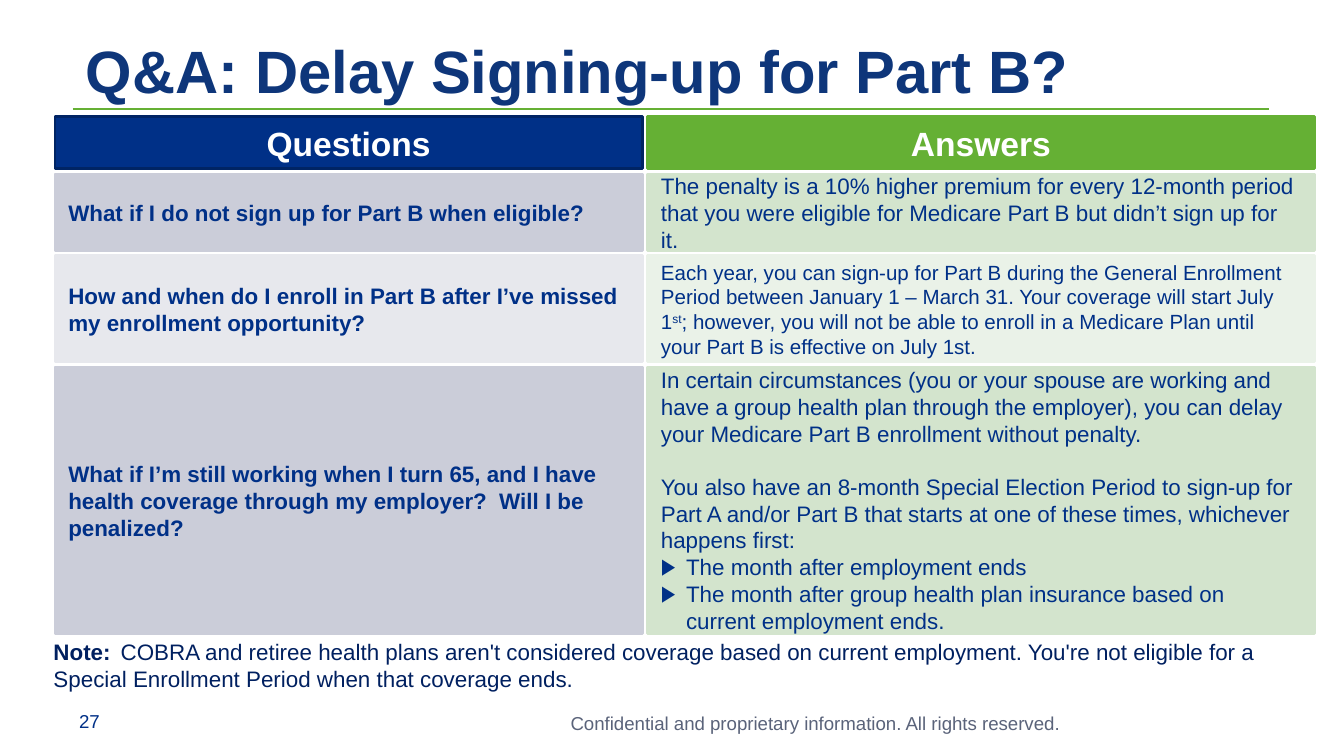
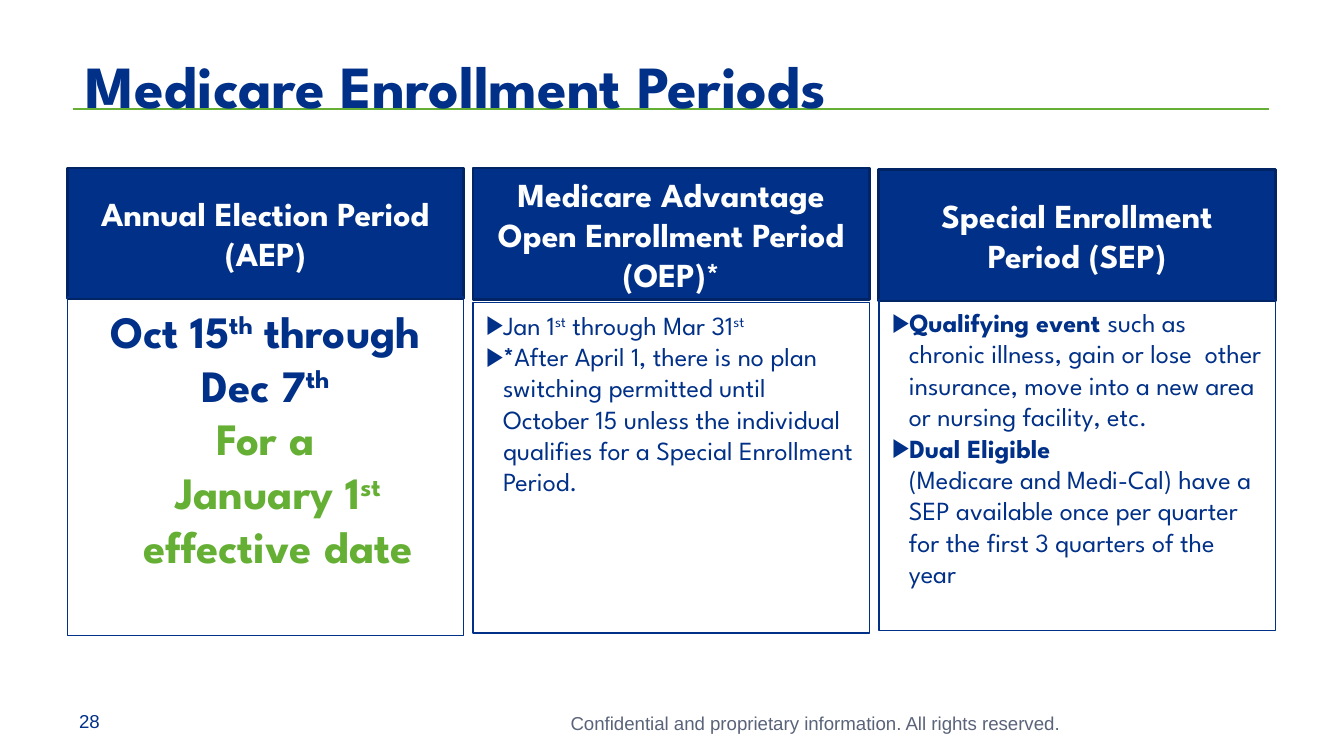
import pptx
import pptx.dml.color
import pptx.enum.shapes
import pptx.enum.text
import pptx.oxml.ns
import pptx.util
from lxml import etree

Pt = pptx.util.Pt
Color = pptx.dml.color.RGBColor
Align = pptx.enum.text.PP_ALIGN
Anchor = pptx.enum.text.MSO_ANCHOR
qn = pptx.oxml.ns.qn

NAVY = Color(0x00, 0x30, 0x87)
NAVY_EDGE = Color(0x00, 0x24, 0x64)
TITLE_BLUE = Color(0x0E, 0x36, 0x7A)
NOTE_BLUE = Color(0x00, 0x20, 0x60)
GREEN = Color(0x65, 0xB0, 0x34)
GRAY = Color(0x5A, 0x63, 0x7A)
WHITE = Color(0xFF, 0xFF, 0xFF)
QUESTION_FILLS = [Color(0xCB, 0xCD, 0xD9), Color(0xE7, 0xE8, 0xED)]
ANSWER_FILLS = [Color(0xD3, 0xE4, 0xCD), Color(0xEA, 0xF2, 0xE8)]
ARIAL = "Arial"
SPARTAN = "League Spartan"

FOOTER = "Confidential and proprietary information. All rights reserved."

QA_TITLE = "Q&A: Delay Signing-up for Part B?"
QA_HEADINGS = ["Questions", "Answers"]
QA_ROWS = [
    {"height": 41.1, "size": 12,
     "question": "What if I do not sign up for Part B when eligible?",
     "answer": ["The penalty is a 10% higher premium for every 12-month period that you "
                "were eligible for Medicare Part B but didn’t sign up for it."]},
    {"height": 56.9, "size": 11,
     "question": "How and when do I enroll in Part B after I’ve missed my enrollment opportunity?",
     "answer": [[("Each year, you can sign-up for Part B during the General Enrollment Period "
                  "between January 1 – March 31. Your coverage will start July 1", ""),
                 ("st", "super"),
                 ("; however, you will not be able to enroll in a Medicare Plan until your "
                  "Part B is effective on July 1st.", "")]]},
    {"height": 142.8, "size": 12,
     "question": "What if I’m still working when I turn 65, and I have health coverage "
                 "through my employer?  Will I be penalized?",
     "answer": [
         {"runs": "In certain circumstances (you or your spouse are working and have a group "
                  "health plan through the employer), you can delay your Medicare Part B "
                  "enrollment without penalty.", "after": 13.8},
         "You also have an 8-month Special Election Period to sign-up for Part A and/or "
         "Part B that starts at one of these times, whichever happens first:",
         {"runs": "The month after employment ends", "bullet": 13.5},
         {"runs": "The month after group health plan insurance based on current employment ends.",
          "bullet": 13.5}]},
]
QA_NOTE = [("Note: ", "bold"),
           ("\tCOBRA and retiree health plans aren't considered coverage based on current "
            "employment. You're not eligible for a Special Enrollment Period when that "
            "coverage ends.", "")]

PERIODS_TITLE = "Medicare Enrollment Periods"
PERIODS = [
    {"heading": "Annual Election Period (AEP)", "head": (90, 69.8), "body": (159.1, 181.4),
     "format": {"size": 24, "bold": True, "align": Align.CENTER},
     "text": [
         [("Oct 15", ""), ("th", "super"), (" through Dec 7", ""), ("th", "super")],
         {"runs": "For a", "color": GREEN},
         {"runs": [("January 1", ""), ("st ", "super"), ("effective date", "")],
          "color": GREEN, "indent": 13.5}]},
    {"heading": "Medicare Advantage Open Enrollment Period (OEP)*",
     "head": (90, 70.6), "body": (162, 177.1), "format": {"size": 14},
     "text": [
         {"runs": [("Jan 1", ""), ("st", "super"), (" through Mar 31", ""), ("st", "super")],
          "bullet": 9},
         {"runs": [("*", "bold"),
                   ("After April 1, there is no plan switching permitted until October 15 "
                    "unless the individual qualifies for a Special Enrollment Period.", "")],
          "bullet": 9}]},
    {"heading": "Special Enrollment Period (SEP)",
     "head": (90.7, 70.6), "body": (160.6, 177.1), "format": {"size": 14},
     "text": [
         {"runs": [("Qualifying event ", "bold"),
                   ("such as chronic illness, gain or lose  other insurance, move into a new "
                    "area or nursing facility, etc.", "")], "bullet": 9},
         {"runs": [("Dual Eligible", "bold"), ("\n", ""),
                   ("(Medicare and Medi-Cal) have a SEP available once per quarter for the "
                    "first 3 quarters of the year", "")], "bullet": 9}]},
]


def set_indent(para, left, bullet=False):
    properties = para._p.get_or_add_pPr()
    properties.set("marL", str(Pt(left)))
    properties.set("indent", str(-Pt(left) if bullet else 0))
    if bullet:
        color = etree.SubElement(properties, qn("a:buClr"))
        etree.SubElement(color, qn("a:srgbClr"), val=str(NAVY))
        etree.SubElement(properties, qn("a:buFont"), typeface=ARIAL)
        etree.SubElement(properties, qn("a:buChar"), char="▶")


def write(box, text, size=12, font=ARIAL, color=NAVY, bold=False, align=Align.LEFT,
          anchor=Anchor.TOP, inset_top=3.6, tab=None):
    frame = box.text_frame
    frame.word_wrap = True
    frame.vertical_anchor = anchor
    frame.margin_top = Pt(inset_top)
    for index, item in enumerate([text] if isinstance(text, str) else text):
        entry = item if isinstance(item, dict) else {"runs": item}
        para = frame.add_paragraph() if index else frame.paragraphs[0]
        para.alignment = align
        if "after" in entry:
            para.space_after = Pt(entry["after"])
        if "bullet" in entry:
            set_indent(para, entry["bullet"], bullet=True)
        if "indent" in entry:
            set_indent(para, entry["indent"])
        if tab:
            stops = etree.SubElement(para._p.get_or_add_pPr(), qn("a:tabLst"))
            etree.SubElement(stops, qn("a:tab"), pos=str(Pt(tab)), algn="l")
        para.font.size = Pt(size)
        runs = entry["runs"]
        for words, style in [(runs, "")] if isinstance(runs, str) else runs:
            if words == "\n":
                para.add_line_break()
                continue
            span = para.add_run()
            span.text = words
            span.font.size = Pt(size)
            span.font.name = font
            span.font.bold = bold or style == "bold"
            span.font.color.rgb = entry.get("color", color)
            if style == "super":
                span.font._element.set("baseline", "30000")


def add_text(page, left, top, width, height, text, **format):
    box = page.shapes.add_textbox(Pt(left), Pt(top), Pt(width), Pt(height))
    write(box, text, **format)


def add_panel(page, left, top, width, height, text, fill=None, line=NAVY, weight=1.5, **format):
    box = page.shapes.add_shape(pptx.enum.shapes.MSO_SHAPE.RECTANGLE,
                                Pt(left), Pt(top), Pt(width), Pt(height))
    box.shadow.inherit = False
    if fill is None:
        box.fill.background()
    else:
        box.fill.solid()
        box.fill.fore_color.rgb = fill
    box.line.color.rgb = line
    box.line.width = Pt(weight)
    write(box, text, **format)


def add_page(deck, number, title, title_top, **title_format):
    page = deck.slides.add_slide(deck.slide_layouts[6])
    rule = page.shapes.add_connector(pptx.enum.shapes.MSO_CONNECTOR.STRAIGHT,
                                     Pt(39), Pt(58.3), Pt(679.7), Pt(58.3))
    rule.line.color.rgb = GREEN
    rule.line.width = Pt(1)
    etree.SubElement(rule._element.spPr, qn("a:effectLst"))
    add_text(page, 287.3, 378, 287.3, 19.4, FOOTER, size=10, color=GRAY, align=Align.RIGHT)
    add_text(page, 39, title_top, 640.8, 36.7, title, size=32, bold=True, inset_top=6,
             **title_format)
    add_text(page, 35.3, 378, 41.8, 18, str(number), size=10, anchor=Anchor.BOTTOM)
    return page


def build_questions(deck):
    page = add_page(deck, 27, QA_TITLE, 12.2, color=TITLE_BLUE)
    columns = [(29.5, 314.6), (347, 357.1)]
    top, gap, head_height = 62.6, 2.7, 27.9
    for (left, width), heading, fill, line in zip(columns, QA_HEADINGS, [NAVY, GREEN],
                                                  [NAVY_EDGE, GREEN]):
        add_panel(page, left, top, width, head_height, heading, fill=fill, line=line, size=18,
                  bold=True, color=WHITE, align=Align.CENTER, anchor=Anchor.MIDDLE)
    top += head_height + gap
    for index, row in enumerate(QA_ROWS):
        cells = [(row["question"], QUESTION_FILLS, 12, True),
                 (row["answer"], ANSWER_FILLS, row["size"], False)]
        for (left, width), (text, fills, size, bold) in zip(columns, cells):
            fill = fills[index % 2]
            add_panel(page, left, top, width, row["height"], text, fill=fill, line=fill,
                      size=size, bold=bold, anchor=Anchor.MIDDLE)
        top += row["height"] + gap
    add_text(page, 21.6, 338.4, 681.8, 36, [QA_NOTE], color=NOTE_BLUE, tab=36)


def build_periods(deck):
    page = add_page(deck, 28, PERIODS_TITLE, 20.2, font=SPARTAN)
    first_left, step, width = 36, 217.4, 212.4
    for index, period in enumerate(PERIODS):
        left = first_left + index * step
        head_top, head_height = period["head"]
        body_top, body_height = period["body"]
        add_panel(page, left, head_top, width, head_height, period["heading"], fill=NAVY,
                  line=NAVY_EDGE, size=18, font=SPARTAN, bold=True, color=WHITE,
                  align=Align.CENTER, anchor=Anchor.MIDDLE)
        add_panel(page, left, body_top, width, body_height, period["text"], weight=0.75,
                  font=SPARTAN, **period["format"])


def main():
    deck = pptx.Presentation()
    deck.slide_width, deck.slide_height = Pt(720), Pt(405)
    build_questions(deck)
    build_periods(deck)
    deck.save("out.pptx")


if __name__ == "__main__":
    main()
